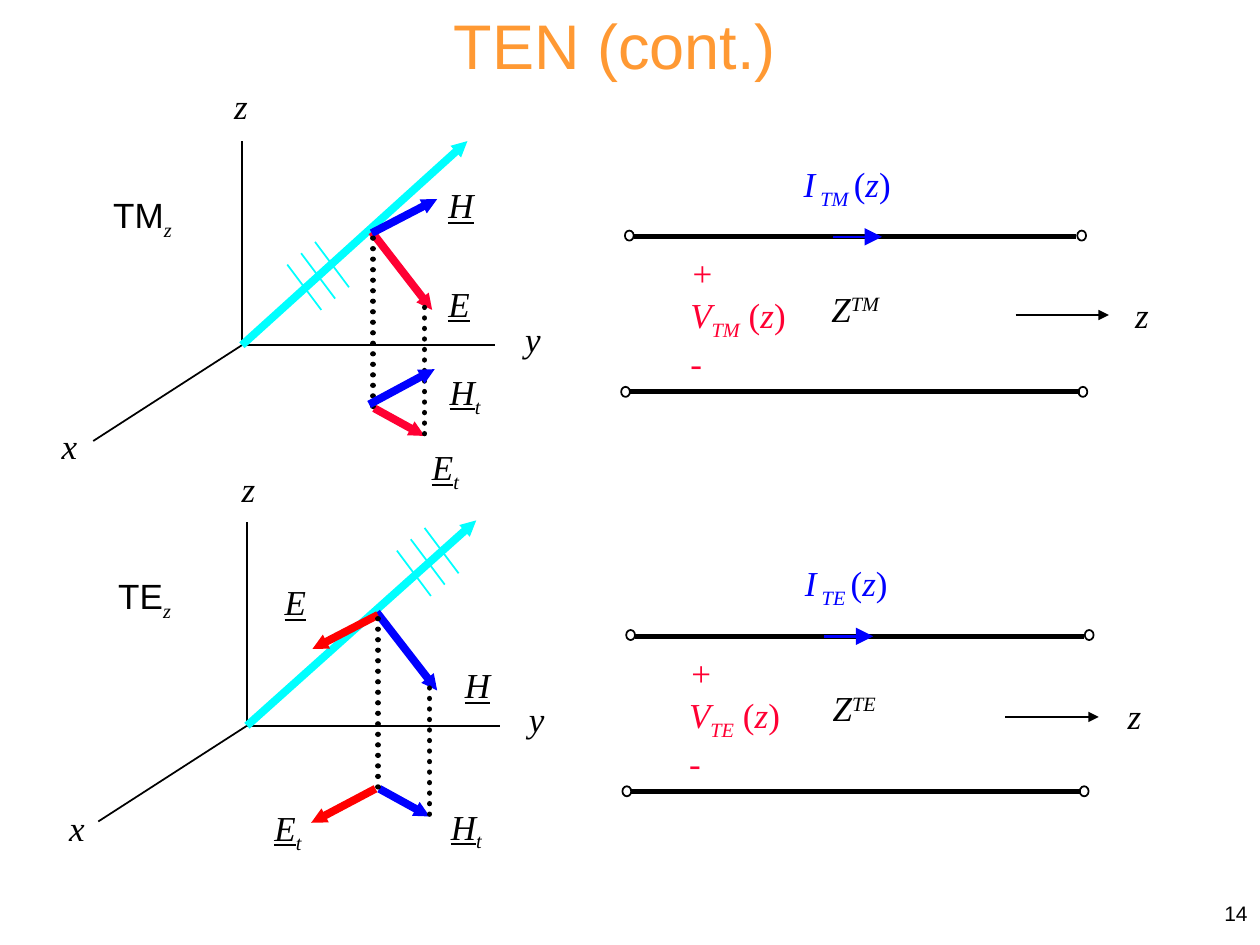
from pptx import Presentation
from pptx.dml.color import RGBColor
from pptx.enum.dml import MSO_LINE as Dash
from pptx.enum.shapes import MSO_CONNECTOR as Conn, MSO_SHAPE as Shape
from pptx.enum.text import MSO_ANCHOR as Anchor, PP_ALIGN as Align
from pptx.oxml.ns import qn
from pptx.util import Pt
from lxml.etree import SubElement

PX = 9144  # 100 px to the inch
BLACK, BLUE, CYAN = "000000", "0000FF", "00FFFF"
ROSE, RED, ORANGE = "FF0033", "FF0000", "FF9933"
SANS, SERIF = "Arial", "Times New Roman"


def rgb(code):
    return RGBColor.from_string(code)


def put(para, text, marks="", font=SERIF, size=20, color=BLACK):
    """Add a run; marks: i italic, u underline, _ subscript, ^ superscript."""
    run = para.add_run()
    run.text = text
    style = run.font
    style.name, style.size = font, Pt(size)
    style.color.rgb = rgb(color)
    style.italic = "i" in marks
    style.underline = "u" in marks
    for mark, base in (("_", "-25000"), ("^", "30000")):
        if mark in marks:
            style._element.set("baseline", base)


class Board:
    def __init__(self, deck):
        self.slide = deck.slides.add_slide(deck.slide_layouts[6])
        self.shapes = self.slide.shapes

    def text(self, box, *lines, align=Align.LEFT, wrap=True,
             anchor=Anchor.TOP, **form):
        """Each line is a list of (text, marks) or (text, marks, font)."""
        frame = self.shapes.add_textbox(*(v * PX for v in box)).text_frame
        frame.word_wrap, frame.vertical_anchor = wrap, anchor
        for n, line in enumerate(lines):
            para = frame.add_paragraph() if n else frame.paragraphs[0]
            para.alignment = align
            for text, marks, *font in line:
                put(para, text, marks, **(form | {"font": font[0]} if font else form))

    def line(self, ends, color=BLACK, width=1, head=None, dots=False):
        item = self.shapes.add_connector(
            Conn.STRAIGHT, *(v * PX for v in ends))
        item.line.color.rgb = rgb(color)
        item.line.width = Pt(width)
        edge = item.get_or_add_ln()
        if dots:
            item.line.dash_style = Dash.ROUND_DOT
            edge.set("cap", "rnd")
        if head:
            SubElement(edge, qn("a:tailEnd"), type="triangle", w=head, len=head)
        SubElement(item._element.spPr, qn("a:effectLst"))

    def ring(self, x, y):
        item = self.shapes.add_shape(
            Shape.OVAL, x * PX, y * PX, 7 * PX, 8 * PX)
        item.shadow.inherit = False
        item.fill.background()
        item.line.color.rgb = rgb(BLACK)
        item.line.width = Pt(1)

    def vector(self, ends, color):
        self.line(ends, color, 4.5, "sm")

    def circuit(self, mode, x, y, right, volt, flow, way, z):
        """Two-wire line; x, y is the top left terminal."""
        low = y + 124
        for spot in ((x, y), (right, y), (x - 3, low), (x + 360, low)):
            self.ring(*spot)
        self.line((x + 7, y + 5, right - 1, y + 5), width=3)
        self.line((x + 4, low + 4, x + 361, low + 4), width=3)
        self.text((x + 154, y + 40, 78, 43), [("Z", "i"), (mode, "i^")])
        tail = [("(", ""), ("z", "i"), (")", "")]
        self.text((volt, y + 12, 99, 110), [("+", "i")],
                  [("V", "i"), (mode, "i_"), (" ", "")] + tail,
                  [("-", "i")], color=ROSE, wrap=False)
        self.text((x + 132, y - 59, 91, 43),
                  [("I", "i"), (f" {mode} ", "i_")] + tail,
                  color=BLUE, wrap=False)
        self.line((flow, y + 5, flow + 39, y + 5), BLUE, 1.5, "lg")
        # direction of travel
        self.line((way[0], way[1], way[0] + 74, way[1]), head="med")
        self.text((*z, 51, 43), [("z", "i")])

    def axes(self, mode, x, y, tip, names):
        """Axes from origin x, y with the wave ray and mode name."""
        self.text((x - 112, y - 125, 80, 43),
                  [(mode, "", SANS), ("z", "i_")])
        for dx, dy in ((201, 0), (0, -162), (-118, 76)):
            self.line((x, y, x + dx, y + dy))
        for name, spot in names.items():
            self.text((*spot, 40, 43), [(name, "i")])
        self.vector((x, y, *tip), CYAN)

    def fields(self, x, y, down, side, labels):
        """Field vectors at origin x, y, with their projections below."""
        self.vector((x + 103, y - 90, x + 151, y - 28), down)
        self.vector(side[0], side[2])
        self.vector((x + 105, y + 50, x + 145, y + 72), down)
        self.line((x + 104, y - 85, x + 104, y + 52), width=3, dots=True)
        self.line((x + 145, y - 30, x + 145, y + 73), width=3, dots=True)
        self.vector(side[1], side[2])
        for name, spot in labels:
            runs = [(name[0], "iu")] + [(sub, "i_") for sub in name[1:]]
            self.text((*spot, 58, 43), runs)

    def fronts(self, x, y):
        """Three wave fronts across the ray."""
        for n in (-1, 0, 1):
            left, top = x + 11 * n, y - 9 * n
            self.line((left, top, left + 27, top + 36), CYAN)


def main():
    deck = Presentation()
    deck.slide_width, deck.slide_height = 1000 * PX, 750 * PX
    board = Board(deck)

    # Title and slide number
    board.text((315, 0, 346, 70), [("TEN (cont.)", "")], font=SANS,
               size=36, color=ORANGE, align=Align.CENTER)
    board.text((792, 700, 208, 50), [("14", "")], font=SANS, size=12,
               align=Align.RIGHT, anchor=Anchor.MIDDLE)

    # TM fields
    board.axes("TM", 192, 274, (371, 112),
               {"x": (39, 332), "y": (407, 247), "z": (176, 62)})
    board.fields(192, 274, ROSE,
                 ((295, 185, 347, 158), (293, 321, 345, 293), BLUE),
                 (("E", (346, 219)), ("H", (346, 141)),
                  ("Et", (333, 349)), ("Ht", (347, 289))))
    board.fronts(239, 201)

    # TE fields
    board.axes("TE", 196, 576, (378, 413),
               {"x": (45, 635), "y": (410, 549), "z": (182, 366)})
    board.fields(196, 576, BLUE,
                 ((300, 488, 248, 515), (298, 626, 247, 653), RED),
                 (("E", (216, 456)), ("H", (359, 522)),
                  ("Et", (208, 635)), ("Ht", (348, 634))))
    board.fronts(326, 428)

    # Equivalent lines
    board.circuit("TM", 496, 183, 855, 538, 661, (806, 250), (891, 228))
    board.circuit("TE", 497, 500, 861, 537, 654, (798, 569), (885, 546))

    deck.save("out.pptx")


if __name__ == "__main__":
    main()
